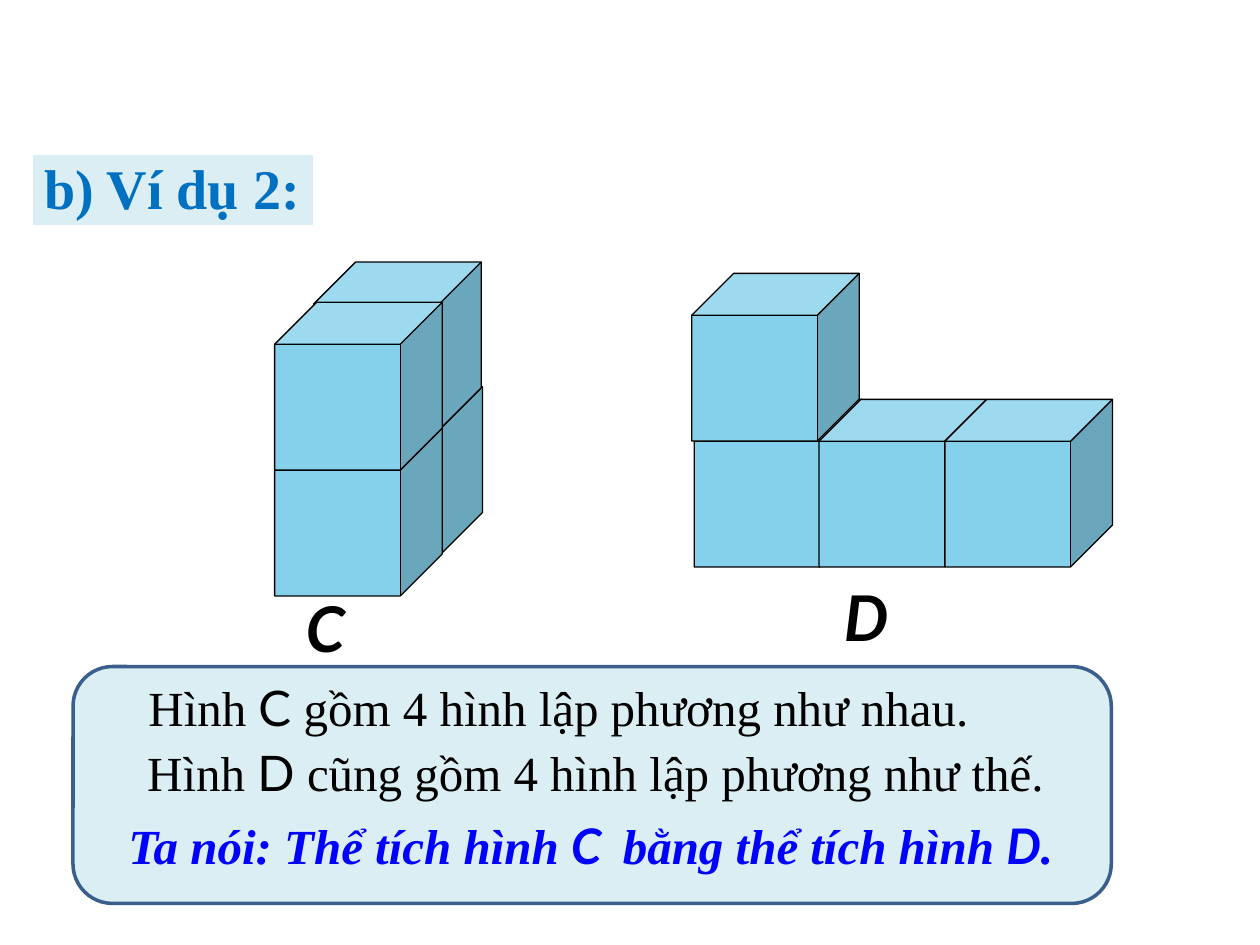
from pptx import Presentation
from pptx.dml.color import RGBColor
from pptx.enum.shapes import MSO_SHAPE
from pptx.enum.text import MSO_ANCHOR, PP_ALIGN
from pptx.util import Inches, Pt

CUBE, RECTANGLE, ROUNDED = MSO_SHAPE.CUBE, MSO_SHAPE.RECTANGLE, MSO_SHAPE.ROUNDED_RECTANGLE
LEFT, TOP = PP_ALIGN.LEFT, MSO_ANCHOR.TOP
TITLE_ONLY = 5
SERIF, SANS = "Times New Roman", "Lato"
COLORS = {
    "panel": "DBEEF4", "panel_line": "3A5F8C", "cube": "85D0EB", "white": "FFFFFF",
    "black": "000000", "heading": "0070C0", "conclusion": "0000FF",
}
CUBE_SIZE = 1.33


def color(name):
    return RGBColor.from_string(COLORS[name])


def write_text(shape, text, size=28, fonts=(SERIF, SANS), ink="black", bold=False, italic=False,
               wrap=True):
    """Fill a shape with one line; each "|" switches to the other font."""
    frame = shape.text_frame
    frame.word_wrap = wrap
    frame.vertical_anchor = TOP
    paragraph = frame.paragraphs[0]
    paragraph.alignment = LEFT
    for index, part in enumerate(text.split("|")):
        run = paragraph.add_run()
        run.text = part
        run.font.name = fonts[index % 2]
        run.font.size = Pt(size)
        run.font.bold, run.font.italic = bold, italic
        run.font.color.rgb = color(ink)


class SlideBuilder:
    def __init__(self, presentation):
        self.slide = presentation.slides.add_slide(presentation.slide_layouts[TITLE_ONLY])

    def shape(self, kind, left, top, width, height, fill, line=None, line_width=2):
        shape = self.slide.shapes.add_shape(
            kind, Inches(left), Inches(top), Inches(width), Inches(height))
        shape.shadow.inherit = False
        shape.fill.solid()
        shape.fill.fore_color.rgb = color(fill)
        if line:
            shape.line.color.rgb = color(line)
            shape.line.width = Pt(line_width)
        else:
            shape.line.fill.background()
        return shape

    def cube(self, left, top):
        cube = self.shape(CUBE, left, top, CUBE_SIZE, CUBE_SIZE, "cube", "black", 0.75)
        cube.adjustments[0] = 0.25

    def text(self, text, left, top, width, height=0.57, **style):
        box = self.slide.shapes.add_textbox(
            Inches(left), Inches(top), Inches(width), Inches(height))
        write_text(box, text, **style)

    def title(self, text, left, top, width, height, **style):
        title = self.slide.shapes.title
        title.left, title.top = Inches(left), Inches(top)
        title.width, title.height = Inches(width), Inches(height)
        write_text(title, text, **style)
        # Bring the title in front of the band behind it
        self.slide.shapes._spTree.append(title._element)


def main():
    presentation = Presentation()
    presentation.slide_width, presentation.slide_height = Inches(10), Inches(7.5)
    builder = SlideBuilder(presentation)

    # Explanation panel and heading
    builder.shape(ROUNDED, 0.58, 5.29, 8.24, 1.88, "panel", "panel_line")
    builder.shape(RECTANGLE, 0.25, 1.22, 2.25, 0.58, "panel", "white")
    builder.title("b) Ví dụ 2:", 0.25, 1.17, 2.44, 0.64, size=32, ink="heading", bold=True)

    # Solid D, then solid C, each from back to front
    solid_d = [(5.51, 3.17), (5.49, 2.17), (6.5, 3.17), (7.5, 3.17)]
    solid_c = [(2.5, 3.07), (2.18, 3.4), (2.49, 2.08), (2.18, 2.4)]
    for left, top in solid_d + solid_c:
        builder.cube(left, top)

    # Names of the solids
    label_style = dict(size=36, fonts=(SANS, SERIF), bold=True, italic=True)
    builder.text("C", 2.33, 4.63, 0.56, 0.71, **label_style)
    label_d = builder.shape(RECTANGLE, 6.6, 4.54, 0.56, 0.71, "white")
    write_text(label_d, "D", **label_style)

    # Explanation
    builder.text("Hình |C |gồm 4 hình lập phương như nhau.", 1.08, 5.33, 6.84)
    builder.text("Hình |D |cũng gồm 4 hình lập phương như thế.", 1.07, 5.84, 7.93)
    builder.text("Ta nói: Thể tích hình |C  |bằng thể tích hình |D|.", 0.92, 6.42, 8.08,
                 ink="conclusion", bold=True, italic=True)

    presentation.save("out.pptx")


if __name__ == "__main__":
    main()
